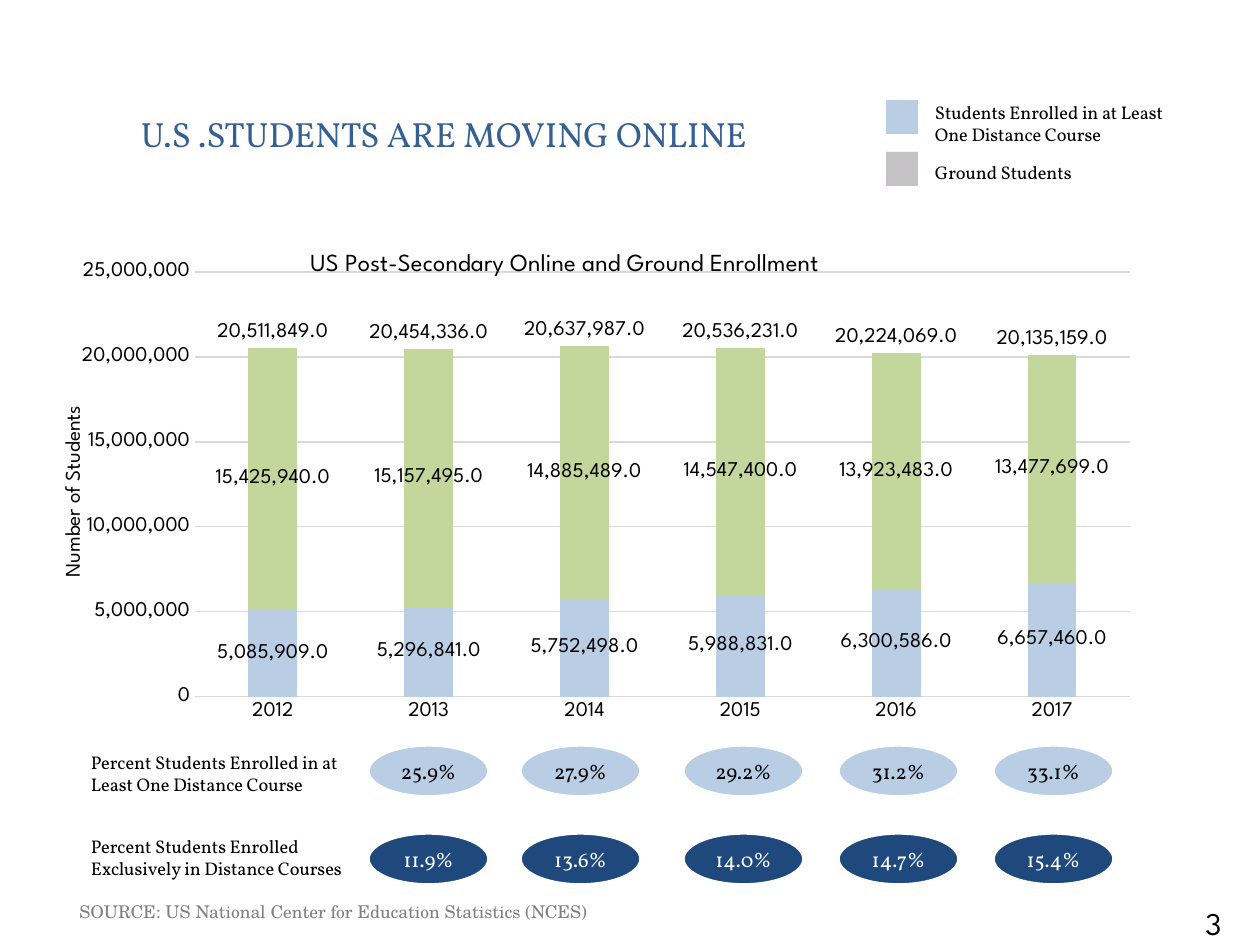
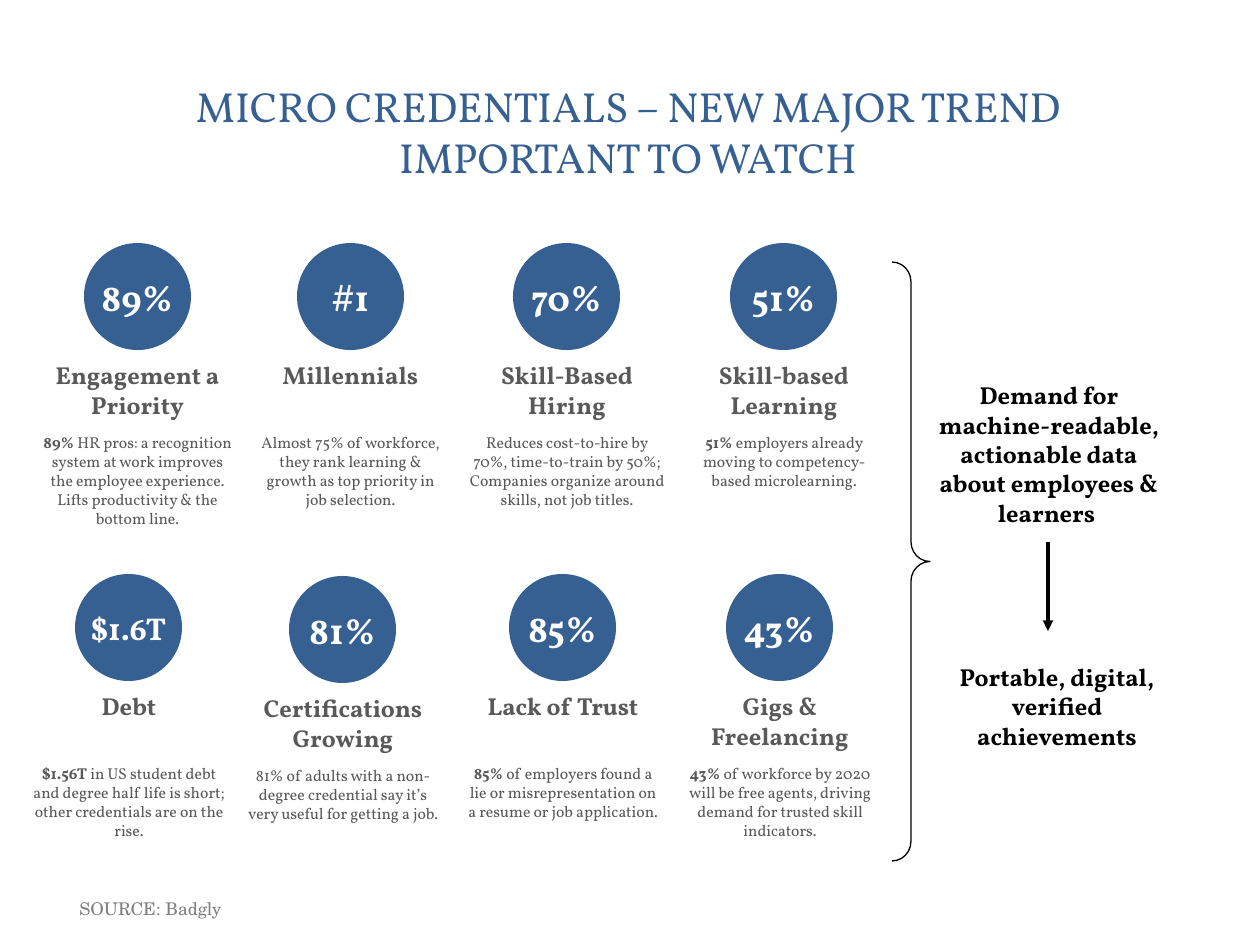
from dataclasses import dataclass
from pptx import Presentation
from pptx.chart.data import CategoryChartData as Data
from pptx.dml.color import RGBColor as RGB
from pptx.enum.chart import XL_CHART_TYPE as Kind, XL_LABEL_POSITION as Spot
from pptx.enum.chart import XL_MARKER_STYLE as Mark, XL_TICK_MARK as Tick
from pptx.enum.shapes import MSO_CONNECTOR as Link, MSO_SHAPE as Form
from pptx.enum.text import MSO_ANCHOR as Anchor, MSO_AUTO_SIZE as Fit, PP_ALIGN as Align
from pptx.oxml import parse_xml
from pptx.oxml.ns import nsdecls, qn
from pptx.util import Emu, Pt


@dataclass(frozen=True)
class Theme:
    serif: str = "Vollkorn"
    sans: str = "League Spartan"
    quote: str = "TeX Gyre Schola"
    blue: str = "376092"
    navy: str = "1F497D"
    sky: str = "B9CDE5"
    green: str = "C3D69B"
    silver: str = "C4C2C5"
    grid: str = "D9D9D9"
    gray: str = "595959"
    pale: str = "808080"
    black: str = "000000"
    white: str = "FFFFFF"
    small: float = 9
    source: float = 10
    note: float = 10.5
    label: float = 12
    head: float = 14
    page: float = 18
    figure: float = 21
    title: float = 20
    banner: float = 24


T = Theme()
SCALE = 914400 / 126


def px(*sizes):
    return [Emu(round(n * SCALE)) for n in sizes]


# Shared parts
def style(font, size, color, face=T.serif, bold=False):
    font.size, font.name, font.bold = Pt(size), face, bold
    font.color.rgb = RGB.from_string(color)


def write(frame, text, size, color, face=T.serif, bold=False,
          align=Align.LEFT, anchor=Anchor.TOP, inset=None, wrap=True):
    """Fill a frame; text is a string or a list of (words, bold) runs."""
    frame.auto_size, frame.word_wrap = Fit.NONE, wrap
    frame.vertical_anchor = anchor
    if inset is not None:
        frame.margin_left = frame.margin_right = px(inset)[0]
        frame.margin_top = frame.margin_bottom = px(inset)[0]
    para = frame.paragraphs[0]
    para.alignment = align
    for words, heavy in [(text, bold)] if isinstance(text, str) else text:
        for i, line in enumerate(words.split("\n")):
            if i:
                para.add_line_break()
            run = para.add_run()
            run.text = line
            style(run.font, size, color, face, heavy)


def label(slide, box, text, size, color, **more):
    write(slide.shapes.add_textbox(*px(*box)).text_frame, text, size, color, **more)


def form(slide, kind, box, fill, edge=None, width=0):
    shape = slide.shapes.add_shape(kind, *px(*box))
    shape.shadow.inherit = False
    if fill:
        shape.fill.solid()
        shape.fill.fore_color.rgb = RGB.from_string(fill)
    else:
        shape.fill.background()
    if edge:
        shape.line.color.rgb = RGB.from_string(edge)
        shape.line.width = Pt(width)
    else:
        shape.line.fill.background()
    return shape


def badge(slide, box, text, size, fill, color, bold=False, **edge):
    shape = form(slide, Form.OVAL, box, fill, **edge)
    write(shape.text_frame, text, size, color, bold=bold, align=Align.CENTER,
          anchor=Anchor.MIDDLE, inset=0, wrap=False)


def start(deck, box, title, size, source, top):
    """Add a slide with its title and source line."""
    slide = deck.slides.add_slide(deck.slide_layouts[5])
    head = slide.shapes.title
    head.left, head.top, head.width, head.height = px(*box)
    write(head.text_frame, title, size, T.blue, align=Align.CENTER, anchor=Anchor.MIDDLE)
    label(slide, (67, top, 1061, 34), "SOURCE: " + source, T.source, T.pale, face=T.quote)
    return slide


# Enrollment slide
YEARS = ("2012", "2013", "2014", "2015", "2016", "2017")
ONLINE = (5085909, 5296841, 5752498, 5988831, 6300586, 6657460)
GROUND = (15425940, 15157495, 14885489, 14547400, 13923483, 13477699)
TOTAL = (20511849, 20454336, 20637987, 20536231, 20224069, 20135159)
SPOTS = (368, 520, 683, 838, 993)
RATES = (
    (745, "Percent Students Enrolled in at Least One Distance Course", 252, 6,
     T.sky, T.black, ("25.9%", "27.9%", "29.2%", "31.2%", "33.1%")),
    (833, "Percent Students Enrolled Exclusively in Distance Courses", 284, 2,
     T.navy, T.white, ("11.9%", "13.6%", "14.0%", "14.7%", "15.4%")),
)
KEYS = (
    (100, T.sky, 1, 234, "Students Enrolled in at Least One Distance Course"),
    (152, T.silver, 9, 290, "Ground Students"),
)


def pin(node, index, box, x, y, w=0, h=0):
    """Fix a chart part at px lengths inside the chart's box."""
    old = node.find(qn("c:layout"))
    if old is not None:
        node.remove(old)
    wide, high = box[2:]
    spots = {"x": x / wide, "y": y / high}
    if w:
        spots.update(w=w / wide, h=h / high)
    inner = '<c:layoutTarget val="inner"/>' if w else ""
    modes = "".join(f'<c:{k}Mode val="edge"/>' for k in "xy")
    marks = "".join(f'<c:{k} val="{v:.4f}"/>' for k, v in spots.items())
    node.insert(index, parse_xml(
        f'<c:layout {nsdecls("c")}><c:manualLayout>{inner}{modes}{marks}'
        "</c:manualLayout></c:layout>"))


def split(chart):
    """Move the last bar series to a line plot on the same axes."""
    bars = chart._chartSpace.find(".//" + qn("c:barChart"))
    last = bars.findall(qn("c:ser"))[-1]
    axes = "".join(f'<c:axId val="{a.get("val")}"/>' for a in bars.findall(qn("c:axId")))
    line = parse_xml(
        f'<c:lineChart {nsdecls("c")}><c:grouping val="standard"/>'
        f'<c:varyColors val="0"/><c:marker val="1"/>{axes}</c:lineChart>')
    flag = last.find(qn("c:invertIfNegative"))
    if flag is not None:
        last.remove(flag)
    line.insert(2, last)
    bars.addnext(line)


def tag(series, spot):
    marks = series.data_labels
    marks.show_value, marks.position = True, spot
    marks.number_format, marks.number_format_is_linked = "#,##0.0", False
    style(marks.font, T.label, T.black, T.sans)


def graph(slide, box):
    data = Data()
    data.categories = YEARS
    for i, vals in enumerate((ONLINE, GROUND, TOTAL), 1):
        data.add_series(f"Series {i}", vals)
    chart = slide.shapes.add_chart(Kind.COLUMN_STACKED, *px(*box), data).chart
    chart.has_legend = False
    style(chart.font, T.label, T.black, T.sans)
    split(chart)

    # Bars and the unseen line that carries the totals
    bars, line = chart.plots
    bars.gap_width, bars.overlap, bars.vary_by_categories = 219, 100, False
    for series, color in zip(bars.series, (T.sky, T.green)):
        series.format.fill.solid()
        series.format.fill.fore_color.rgb = RGB.from_string(color)
        tag(series, Spot.CENTER)
    total = line.series[0]
    total.format.line.fill.background()
    total.marker.style, total.smooth = Mark.NONE, False
    tag(total, Spot.ABOVE)

    # Axes
    cat, val = chart.category_axis, chart.value_axis
    for axis in (cat, val):
        axis.major_tick_mark = axis.minor_tick_mark = Tick.NONE
        style(axis.tick_labels.font, T.label, T.black, T.sans)
    val.minimum_scale, val.maximum_scale, val.major_unit = 0, 25000000, 5000000
    val.tick_labels.number_format = "#,##0"
    val.tick_labels.number_format_is_linked = False
    val.format.line.fill.background()
    val.has_major_gridlines = True
    for rule in (cat.format.line, val.major_gridlines.format.line):
        rule.color.rgb, rule.width = RGB.from_string(T.grid), Pt(0.75)

    # Titles and plot area
    for part, text, size, x, y in (
            (chart.chart_title, "US Post-Secondary Online and Ground Enrollment", T.head, 247, 40),
            (val.axis_title, "Number of Students", T.label, 0, 195)):
        run = part.text_frame.paragraphs[0].add_run()
        run.text = text
        style(run.font, size, T.black, T.sans)
        pin(part._element, 1, box, x, y)
    val.axis_title.text_frame._txBody.bodyPr.set("rot", "-5400000")
    area = chart._chartSpace.find(".//" + qn("c:plotArea"))
    pin(area, 0, box, 136, 65, 935, 425)


def legend(slide, left):
    for top, color, drop, wide, text in KEYS:
        form(slide, Form.RECTANGLE, (left, top, 32, 34), color)
        label(slide, (left + 49, top + drop, wide, 52), text, T.note, T.black, inset=0)


def rates(slide, left):
    for top, text, wide, drop, fill, color, vals in RATES:
        label(slide, (left, top + drop, wide, 52), text, T.note, T.black, inset=0)
        for x, val in zip(SPOTS, vals):
            badge(slide, (x, top, 121, 52), val, T.label, fill, color, edge=T.white, width=2)


def enroll(deck):
    slide = start(deck, (105, 95, 678, 78), "U.S .STUDENTS ARE MOVING ONLINE", T.title,
                  "US National Center for Education Statistics (NCES)", 895)
    label(slide, (1193, 898, 95, 50), "3", T.page, T.black, face=T.sans)
    graph(slide, (59, 207, 1102, 582))
    legend(slide, 886)
    rates(slide, 91)


# Credentials slide: left, top, width, figure, heading, bold lead, body
CARDS = (
    (28, 243, 219, "89%", "Engagement a Priority", "89% ",
     "HR pros: a recognition system at work improves the employee experience. "
     "Lifts productivity & the bottom line."),
    (243, 243, 215, "#1", "Millennials", "",
     "Almost 75% of workforce, they rank learning & growth as top priority in job selection."),
    (456, 243, 222, "70%", "Skill-Based Hiring", "",
     "Reduces cost-to-hire by 70%, time-to-train by 50%; Companies organize around "
     "skills, not job titles."),
    (673, 243, 222, "51%", "Skill-based Learning", "51% ",
     "employers already moving to competency-based microlearning."),
    (18, 574, 222, "$1.6T", "Debt", "$1.56T",
     " in US student debt and degree half life is short; other credentials are on the rise."),
    (232, 576, 222, "81%", "Certifications Growing", "",
     "81% of adults with a non-degree credential say it’s very useful for getting a job."),
    (452, 574, 222, "85%", "Lack of Trust", "85%",
     " of employers found a lie or misrepresentation on a resume or job application."),
    (669, 574, 222, "43%", "Gigs & Freelancing", "43% ",
     "of workforce by 2020 will be free agents, driving demand for trusted skill indicators."),
)


def card(slide, left, top, wide, figure, head, lead, body):
    size = T.page if len(figure) > 3 else T.figure
    badge(slide, (left + (wide - 107) // 2, top, 107, 107), figure, size,
          T.blue, T.white, bold=True)
    label(slide, (left, top + 111, wide, 72), head, T.head, T.gray,
          bold=True, align=Align.CENTER)
    runs = [(lead, True), (body, False)] if lead else body
    label(slide, (left, top + 184, wide, 90), runs, T.small, T.gray, align=Align.CENTER)


def result(slide, left, top):
    """Brace, demand, arrow and outcome."""
    brace = form(slide, Form.RIGHT_BRACE, (left, top, 38, 599), None, T.black, 0.75)
    brace.adjustments[0], brace.adjustments[1] = 0.52, 0.5
    label(slide, (left + 27, top + 112, 260, 161),
          "Demand for machine-readable, actionable data about employees & learners ",
          T.head, T.black, bold=True, align=Align.CENTER)
    label(slide, (left + 35, top + 397, 260, 94), "Portable, digital, verified achievements",
          T.head, T.black, bold=True, align=Align.CENTER, anchor=Anchor.MIDDLE, inset=3)
    mid = left + 156
    arrow = slide.shapes.add_connector(
        Link.STRAIGHT, *px(mid, top + 280, mid, top + 369))
    arrow.line.color.rgb, arrow.line.width = RGB.from_string(T.black), Pt(2)
    arrow.line._get_or_add_ln().append(parse_xml(f'<a:tailEnd {nsdecls("a")} type="triangle"/>'))
    arrow._element.spPr.append(parse_xml(f'<a:effectLst {nsdecls("a")}/>'))


def trend(deck):
    slide = start(deck, (77, 92, 1102, 78),
                  "MICRO CREDENTIALS – NEW MAJOR TREND\nIMPORTANT TO WATCH", T.banner,
                  "Badgly", 892)
    for item in CARDS:
        card(slide, *item)
    result(slide, 892, 262)


def main():
    deck = Presentation()
    deck.slide_width, deck.slide_height = px(1260, 945)
    enroll(deck)
    trend(deck)
    deck.save("out.pptx")


if __name__ == "__main__":
    main()
